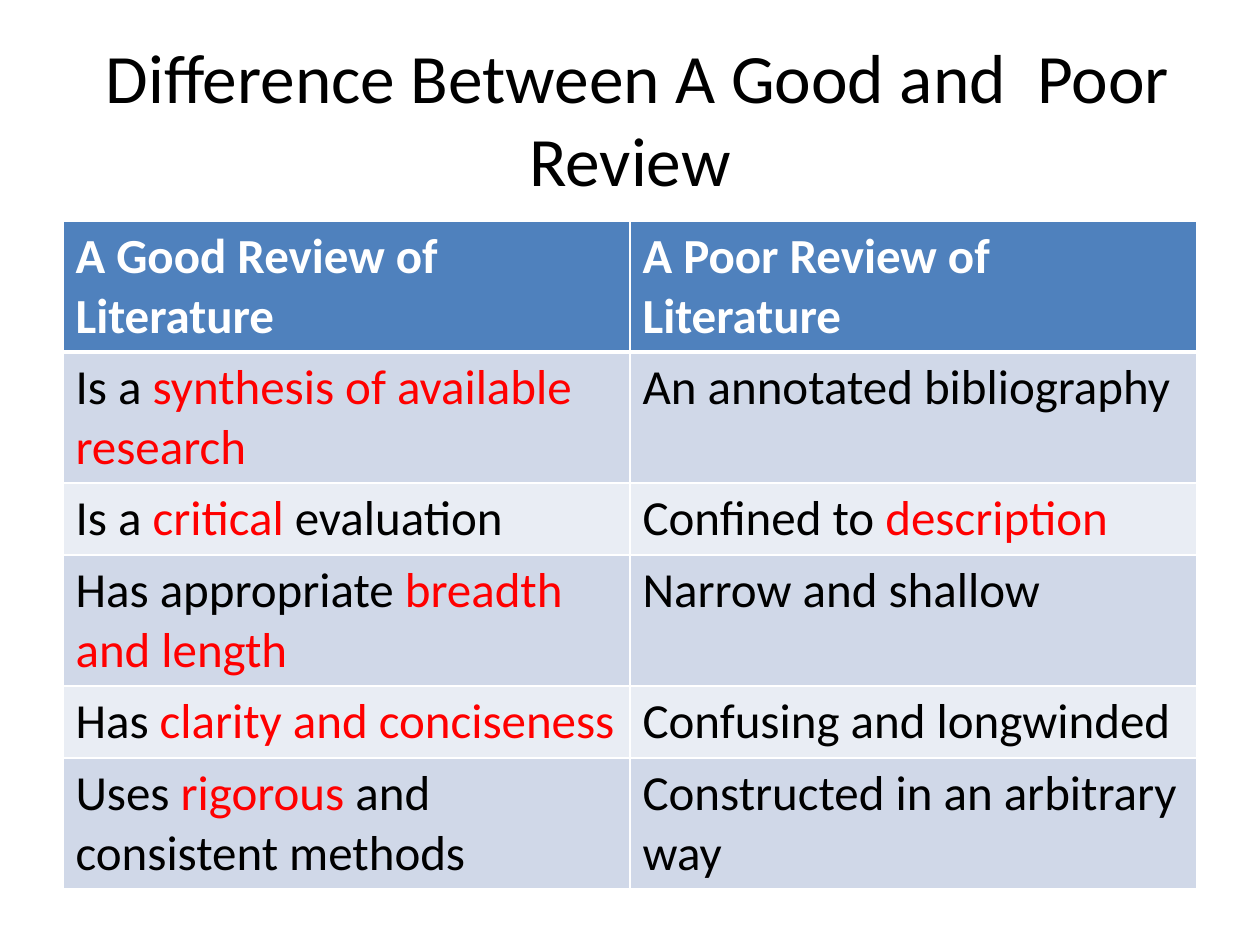
from pptx import Presentation
from pptx.dml.color import RGBColor
from pptx.enum.text import MSO_ANCHOR, PP_ALIGN
from pptx.oxml import parse_xml
from pptx.oxml.ns import nsdecls
from pptx.util import Pt

MIDDLE = MSO_ANCHOR.MIDDLE
CENTER = PP_ALIGN.CENTER

BLACK = RGBColor(0x00, 0x00, 0x00)
WHITE = RGBColor(0xFF, 0xFF, 0xFF)
RED = RGBColor(0xFF, 0x00, 0x00)
BLUE = RGBColor(0x4F, 0x81, 0xBD)
BANDS = (RGBColor(0xE9, 0xED, 0xF4), RGBColor(0xD0, 0xD8, 0xE8))

FONT = "Calibri"
TALL, SHORT = 131, 72

TITLE = " Difference Between A Good and  Poor Review"
ROWS = [
    (TALL, "A Good Review of Literature", "A Poor Review of Literature"),
    (TALL, "Is a *synthesis of available research*", "An annotated bibliography"),
    (SHORT, "Is a *critical* evaluation", "Confined to *description*"),
    (TALL, "Has appropriate *breadth and length*", "Narrow and shallow"),
    (SHORT, "Has *clarity and conciseness*", "Confusing and longwinded"),
    (TALL, "Uses *rigorous* and consistent methods", "Constructed in an arbitrary way"),
]


def px(size):
    return round(size * 914400 / 126)


class Deck:
    def __init__(self, width, height):
        self.show = Presentation()
        self.show.slide_width = px(width)
        self.show.slide_height = px(height)
        self.slide = self.show.slides.add_slide(self.show.slide_layouts[6])

    def label(self, para, text, size, color=BLACK, bold=False):
        font = para.font
        font.name, font.size, font.bold = FONT, Pt(size), bold
        font.color.rgb = color
        for i, part in enumerate(text.split("*")):
            if part:
                run = para.add_run()
                run.text = part
                if i % 2:
                    run.font.color.rgb = RED

    def title(self, box, text):
        frame = self.slide.shapes.add_textbox(*map(px, box)).text_frame
        frame.word_wrap = True
        frame.vertical_anchor = MIDDLE
        para = frame.paragraphs[0]
        para.alignment = CENTER
        self.label(para, text, 39.6)

    def border(self, cell, head):
        props = cell._tc.get_or_add_tcPr()
        for side in "LRTB":
            width = Pt(3 if head and side == "B" else 1)
            props.append(parse_xml(
                f'<a:ln{side} {nsdecls("a")} w="{width}"><a:solidFill>'
                f'<a:srgbClr val="{WHITE}"/></a:solidFill></a:ln{side}>'))

    def table(self, left, top, width, rows):
        count = len(rows[0]) - 1
        tall = sum(row[0] for row in rows)
        box = map(px, (left, top, width, tall))
        grid = self.slide.shapes.add_table(len(rows), count, *box).table
        for r, (height, *texts) in enumerate(rows):
            grid.rows[r].height = px(height)
            head = r == 0
            for c, text in enumerate(texts):
                cell = grid.cell(r, c)
                self.border(cell, head)
                cell.fill.solid()
                cell.fill.fore_color.rgb = BLUE if head else BANDS[r % 2]
                para = cell.text_frame.paragraphs[0]
                self.label(para, text, 28, WHITE if head else BLACK, head)


def main():
    deck = Deck(1260, 945)
    deck.title((63, 38, 1134, 158), TITLE)
    deck.table(63, 221, 1134, ROWS)
    deck.show.save("out.pptx")


if __name__ == "__main__":
    main()
